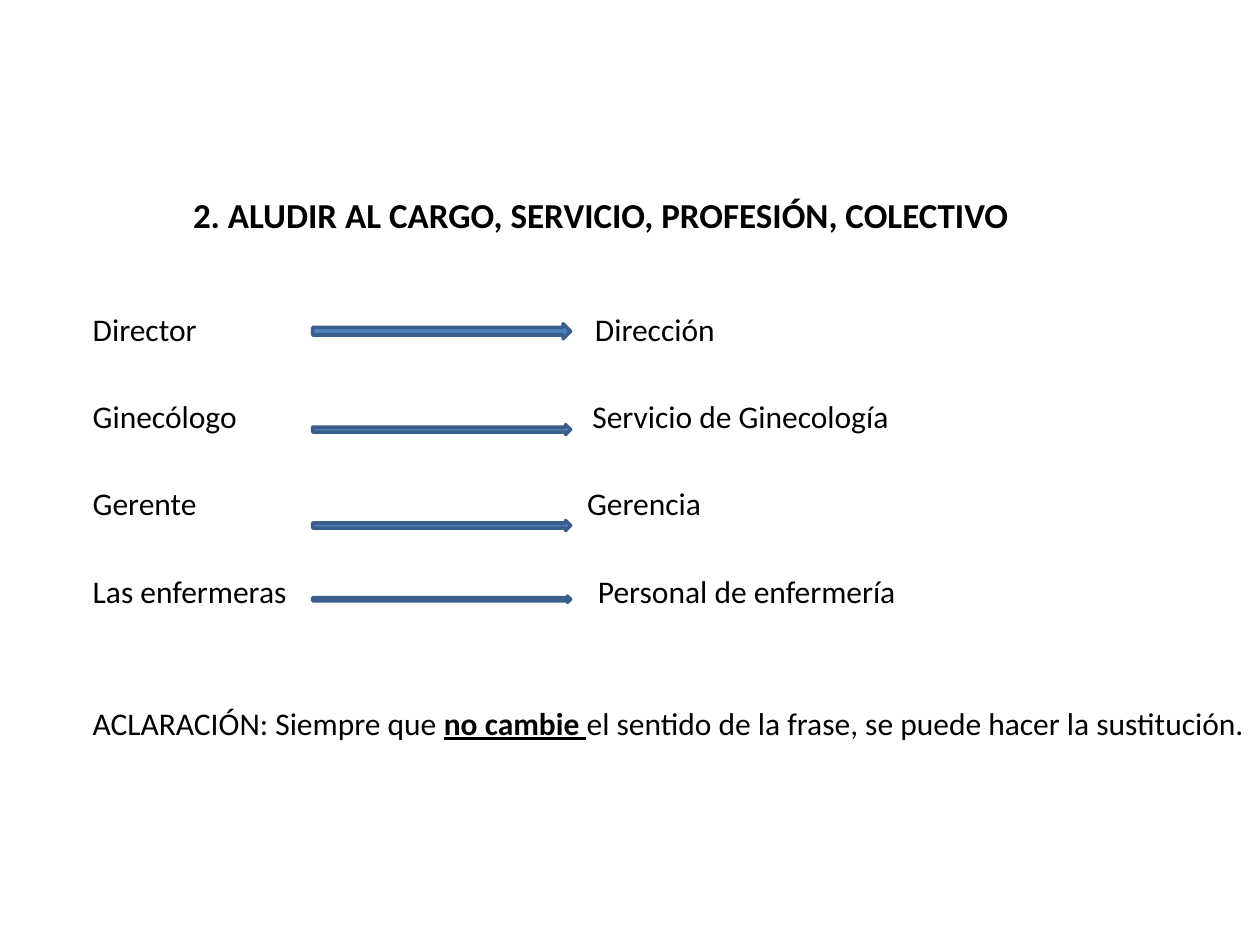
from pptx import Presentation
from pptx.dml.color import RGBColor
from pptx.enum.shapes import MSO_SHAPE as Shape
from pptx.enum.text import MSO_ANCHOR as Anchor, PP_ALIGN as Align
from pptx.util import Pt
from lxml.etree import SubElement
from pptx.oxml.ns import qn

TITLE = "2. ALUDIR AL CARGO, SERVICIO, PROFESIÓN, COLECTIVO"
# role, inclusive term, tab stop of the term
PAIRS = [
    ("Director", "Dirección", 287),
    ("Ginecólogo", "Servicio de Ginecología", 285.5),
    ("Gerente", "Gerencia", 282.5),
    ("Las enfermeras", "Personal de enfermería", 288.7),
]
# text, emphasised
NOTE = [
    ("ACLARACIÓN: Siempre que ", False),
    ("no cambie ", True),
    ("el sentido de la frase, se puede hacer la sustitución.", False),
]
# top, height of the arrow beside each pair
ARROWS = [(185, 8.6), (242.6, 5.8), (297.4, 5.8), (340.6, 3.6)]
ARROW_LEFT, ARROW_WIDTH = 178.7, 147.4
PAIR_GAP, NOTE_GAP = 28.3, 54

THEME = {
    "font": "Calibri",
    "text": RGBColor.from_string("000000"),
    "arrow": RGBColor.from_string("4F81BD"),
    "outline": RGBColor.from_string("3A5F8C"),
    "title_size": Pt(20),
    "body_size": Pt(18),
}


def add_span(para, text, size, bold=False, underline=False):
    span = para.add_run()
    span.text = text
    font = span.font
    font.name, font.size = THEME["font"], size
    font.bold, font.underline = bold, underline
    font.color.rgb = THEME["text"]


def add_tab_stop(para, position):
    tabs = SubElement(para._p.get_or_add_pPr(), qn("a:tabLst"))
    SubElement(tabs, qn("a:tab"), pos=str(Pt(position)), algn="l")


def add_title(page):
    title = page.shapes.title
    title.left, title.top, title.width, title.height = Pt(40.3), Pt(77), Pt(606.2), Pt(90.7)
    title.text_frame.vertical_anchor = Anchor.MIDDLE
    para = title.text_frame.paragraphs[0]
    para.alignment = Align.CENTER
    add_span(para, TITLE, THEME["title_size"], bold=True)


def add_body(page):
    frame = page.shapes.add_textbox(Pt(53), Pt(177), Pt(667), Pt(260)).text_frame
    frame.word_wrap = True
    frame.margin_left = frame.margin_right = frame.margin_top = frame.margin_bottom = 0
    for index, (role, term, stop) in enumerate(PAIRS):
        para = frame.add_paragraph() if index else frame.paragraphs[0]
        para.space_before = Pt(PAIR_GAP if index else 0)
        add_tab_stop(para, stop)
        add_span(para, f"{role}\t{term}", THEME["body_size"])
    para = frame.add_paragraph()
    para.space_before = Pt(NOTE_GAP)
    for text, strong in NOTE:
        add_span(para, text, THEME["body_size"], strong, strong)


def add_arrows(page):
    for top, height in ARROWS:
        arrow = page.shapes.add_shape(
            Shape.RIGHT_ARROW, Pt(ARROW_LEFT), Pt(top), Pt(ARROW_WIDTH), Pt(height))
        arrow.shadow.inherit = False
        arrow.fill.solid()
        arrow.fill.fore_color.rgb = THEME["arrow"]
        arrow.line.color.rgb = THEME["outline"]
        arrow.line.width = Pt(2)


def main():
    deck = Presentation()
    deck.slide_width, deck.slide_height = Pt(720), Pt(540)
    page = deck.slides.add_slide(deck.slide_layouts[5])
    add_title(page)
    add_body(page)
    add_arrows(page)
    deck.save("out.pptx")


if __name__ == "__main__":
    main()
